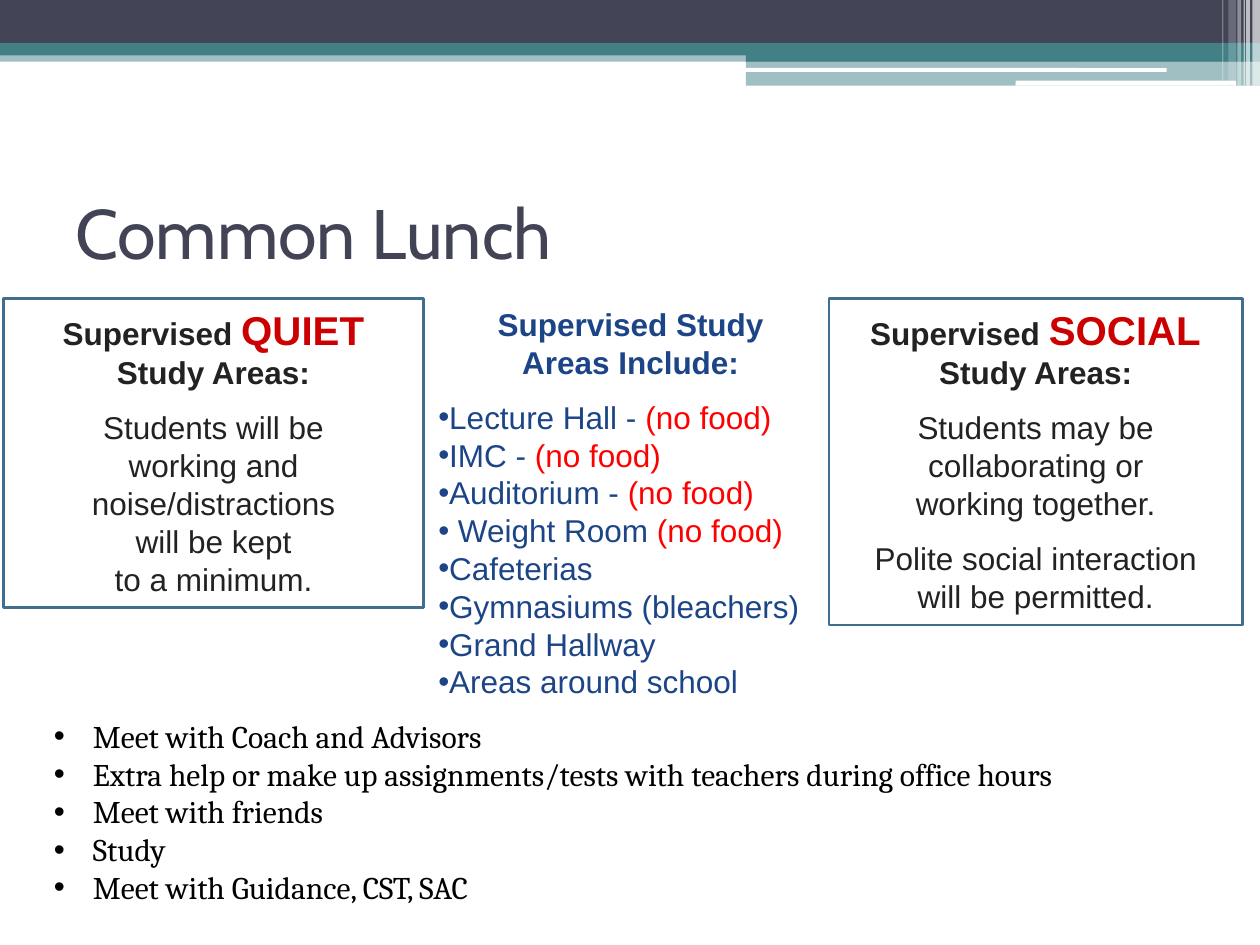
"""Build the Common Lunch slide with its study-area panels and activity list."""
from lxml.etree import SubElement
from pptx import Presentation
from pptx.dml.color import RGBColor
from pptx.enum.shapes import MSO_SHAPE as Shape
from pptx.enum.text import MSO_ANCHOR as Anchor, MSO_AUTO_SIZE as AutoSize, PP_ALIGN as Align
from pptx.oxml.ns import qn
from pptx.util import Inches, Pt

COLORS = {
    "navy": "424456", "teal": "438086", "white": "FFFFFF", "border": "406F8D",
    "dark": "222222", "crimson": "CC0000", "blue": "1C4587", "red": "FF0000",
    "black": "000000",
}
WIDTH, HEIGHT = Inches(10), Inches(7.5)

# Positions are percentages of the slide: left, top, width, height.
BANDS = [
    ((0, 5.33, 100, 1.2), "teal", 50),
    ((0, 0, 100, 4.53), "navy", 100),
    ((0, 4.53, 100, 1.33), "teal", 100),
    ((59.2, 5.2, 40.8, 1.33), "teal", 100),
    ((59.2, 6.4, 40.8, 2.67), "teal", 50),
]
PILLS = [(59.1, 7.2, 33.5, 0.4), (80.6, 8.53, 17.5, 0.53)]
STRIPES = [
    (99.4, 0.6, 9.07, 65), (98.9, 0.3, 9.07, 65), (98.7, 0.1, 9.07, 60),
    (98.2, 0.3, 9.07, 40), (97.5, 0.6, 8.53, 20), (97, 0.1, 8.53, 30),
]
PANEL_TOP = 31.6
PANELS = [
    (65.8, 32.8, 34.53, "SOCIAL", [
        ("Students may be collaborating or", 0), ("working together.", 10),
        ("Polite social interaction", 0), ("will be permitted.", 0)]),
    (0.3, 33.3, 32.67, "QUIET", [
        ("Students will be", 0), ("working and noise/distractions", 0),
        ("will be kept", 0), ("to a minimum.", 0)]),
]
AREAS_HEADING = [("Supervised Study", 0), ("Areas Include:", 10)]
NO_FOOD = "(no food)"
AREAS = [
    ("Lecture Hall - ", NO_FOOD), ("IMC - ", NO_FOOD), ("Auditorium - ", NO_FOOD),
    (" Weight Room ", NO_FOOD), ("Cafeterias", ""), ("Gymnasiums (bleachers)", ""),
    ("Grand Hallway", ""), ("Areas around school", ""),
]
ACTIVITIES = [
    "Meet with Coach and Advisors",
    "Extra help or make up assignments/tests with teachers during office hours",
    "Meet with friends", "Study", "Meet with Guidance, CST, SAC",
]


def place(left, top, width, height):
    return (int(WIDTH * left / 100), int(HEIGHT * top / 100),
            int(WIDTH * width / 100), int(HEIGHT * height / 100))


def rgb(name):
    return RGBColor.from_string(COLORS[name])


def add_block(slide, box, fill=None, opacity=100, kind=Shape.RECTANGLE):
    shape = slide.shapes.add_shape(kind, *place(*box))
    shape.shadow.inherit = False
    if fill:
        shape.line.fill.background()
        shape.fill.solid()
        shape.fill.fore_color.rgb = rgb(fill)
        if opacity < 100:
            color = shape.fill._xPr.find(f".//{qn('a:srgbClr')}")
            SubElement(color, qn("a:alpha"), val=str(opacity * 1000))
    else:
        shape.fill.background()
        shape.line.color.rgb = rgb("border")
        shape.line.width = Pt(1.5)
    return shape


def prepare_frame(shape, anchor=Anchor.TOP, auto_size=AutoSize.SHAPE_TO_FIT_TEXT):
    frame = shape.text_frame
    frame.word_wrap = True
    frame.auto_size = auto_size
    frame.vertical_anchor = anchor
    return frame


def add_text_box(slide, box, **options):
    return prepare_frame(slide.shapes.add_textbox(*place(*box)), **options)


def add_paragraph(frame, align=Align.LEFT, before=0, after=0, bullet=False, indent=0):
    first = frame.paragraphs[0]
    paragraph = frame.add_paragraph() if first.runs else first
    paragraph.alignment = align
    paragraph.space_before, paragraph.space_after = Pt(before), Pt(after)
    if bullet:
        properties = paragraph._p.get_or_add_pPr()
        properties.set("marL", str(Inches(indent)))
        properties.set("indent", str(-Inches(indent)))
        SubElement(properties, qn("a:buFont"), typeface="Arial")
        SubElement(properties, qn("a:buChar"), char="•")
    return paragraph


def add_run(paragraph, text, size=18, font="Arial", color="dark", bold=False):
    run = paragraph.add_run()
    run.text = text
    run.font.size, run.font.name, run.font.bold = Pt(size), font, bold
    run.font.color.rgb = rgb(color)


def add_header(slide):
    for box, fill, opacity in BANDS:
        add_block(slide, box, fill, opacity)
    for box in PILLS:
        add_block(slide, box, "white", kind=Shape.ROUNDED_RECTANGLE)
    for left, width, height, opacity in STRIPES:
        add_block(slide, (left, 0, width, height), "white", opacity)


def add_panel(slide, left, width, height, keyword, lines):
    frame = prepare_frame(add_block(slide, (left, PANEL_TOP, width, height)))
    heading = add_paragraph(frame, Align.CENTER, before=10, after=10)
    add_run(heading, "Supervised ", bold=True)
    add_run(heading, keyword, size=23, color="crimson", bold=True)
    add_run(heading, " Study Areas:", bold=True)
    for text, after in lines:
        add_run(add_paragraph(frame, Align.CENTER, after=after), text)


def add_areas(slide):
    frame = add_text_box(slide, (33.8, PANEL_TOP, 32.5, 43.6))
    for text, after in AREAS_HEADING:
        add_run(add_paragraph(frame, Align.CENTER, after=after), text, color="blue", bold=True)
    for area, note in AREAS:
        paragraph = add_paragraph(frame, bullet=True, after=12 if area == AREAS[-1][0] else 0)
        add_run(paragraph, area, color="blue")
        if note:
            add_run(paragraph, note, color="red")


def main():
    presentation = Presentation()
    presentation.slide_width, presentation.slide_height = WIDTH, HEIGHT
    slide = presentation.slides.add_slide(presentation.slide_layouts[6])
    add_header(slide)
    title = add_text_box(slide, (5, 16.67, 90, 15.6), anchor=Anchor.MIDDLE, auto_size=AutoSize.NONE)
    add_run(add_paragraph(title), "Common Lunch", size=40, font="Cabin", color="navy")
    for panel in PANELS:
        add_panel(slide, *panel)
    add_areas(slide)
    activities = add_text_box(slide, (3.3, 75.2, 95.3, 25.6))
    for text in ACTIVITIES:
        add_run(add_paragraph(activities, bullet=True, indent=0.31), text, font="Cambria", color="black")
    presentation.save("out.pptx")


if __name__ == "__main__":
    main()
